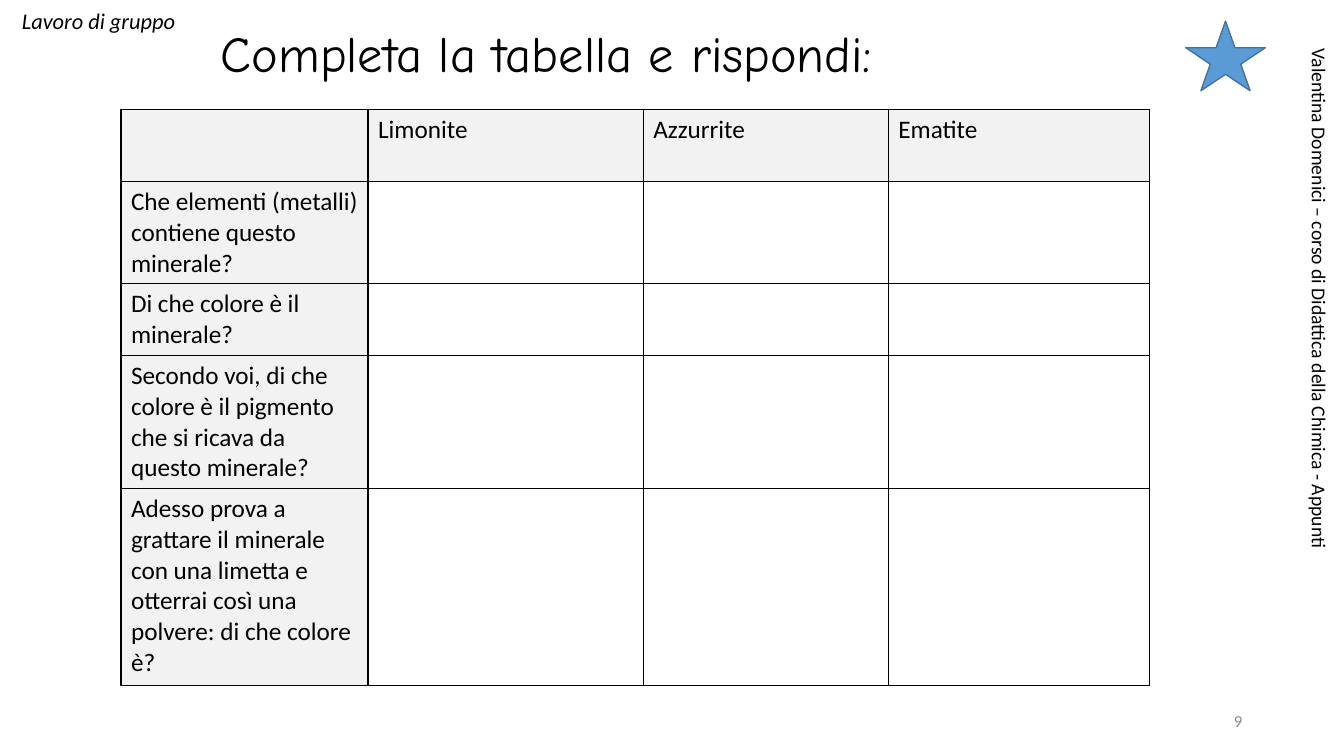
"""Build the group-work slide with the mineral table."""
from lxml import etree
from pptx import Presentation
from pptx import util as u
from pptx.dml.color import RGBColor
from pptx.enum import shapes, text
from pptx.oxml import ns

BLACK = RGBColor(0x00, 0x00, 0x00)
WHITE = RGBColor(0xFF, 0xFF, 0xFF)
HEADER_GREY = RGBColor(0xF2, 0xF2, 0xF2)
NUMBER_GREY = RGBColor(0x8C, 0x8C, 0x8C)
STAR_BLUE = RGBColor(0x5B, 0x9B, 0xD5)
STAR_EDGE = RGBColor(0x43, 0x73, 0x9E)

PX = 9144
SLIDE_SIZE = (1333, 750)
TITLE = "Completa la tabella e rispondi:"
TITLE_BOX = (209, 21, 900, 69)
MINERALS = ["Limonite", "Azzurrite", "Ematite"]
QUESTIONS = [
    "Che elementi (metalli) contiene questo minerale?",
    "Di che colore è il minerale?",
    "Secondo voi, di che colore è il pigmento che si ricava da questo minerale?",
    "Adesso prova a grattare il minerale con una limetta e otterrai così una "
    "polvere: di che colore è?",
]
TABLE_ORIGIN = (120, 109)
COLUMN_WIDTHS = [245, 273, 243, 259]
ROW_HEIGHTS = [71, 101, 71, 132, 195]
STAR_BOX = (1176, 21, 79, 69)
LABELS = [
    {"words": "Lavoro di gruppo", "box": (12, 2, 176, 37), "size": 16, "italic": True},
    {"words": "9", "box": (942, 695, 300, 40), "size": 12, "color": NUMBER_GREY,
     "align": text.PP_ALIGN.RIGHT, "anchor": text.MSO_ANCHOR.MIDDLE},
    {"words": "Valentina Domenici – corso di Didattica della Chimica - Appunti",
     "box": (995, 335, 627, 34), "size": 14, "rotation": 90},
]


def to_emu(lengths):
    """Convert px lengths to EMU."""
    return [u.Emu(length * PX) for length in lengths]


def write(frame, words, size, font="Calibri", color=BLACK, italic=False):
    """Set and format the text of a frame."""
    frame.text = words
    for run in frame.paragraphs[0].runs:
        run.font.name = font
        run.font.size = u.Pt(size)
        run.font.color.rgb = color
        run.font.italic = italic


def add_title(slide):
    """Place and format the title placeholder."""
    title = slide.shapes.title
    title.left, title.top, title.width, title.height = to_emu(TITLE_BOX)
    frame = title.text_frame
    write(frame, TITLE, 36, "Comic Neue")
    frame.auto_size = text.MSO_AUTO_SIZE.NONE
    frame.vertical_anchor = text.MSO_ANCHOR.MIDDLE
    paragraph = frame.paragraphs[0]
    paragraph.alignment = text.PP_ALIGN.LEFT
    paragraph.line_spacing = 0.9


def add_borders(cell):
    """Draw a thin black line on each side of a cell."""
    properties = cell._tc.get_or_add_tcPr()
    for side in ("a:lnL", "a:lnR", "a:lnT", "a:lnB"):
        line = etree.SubElement(properties, ns.qn(side), w=str(u.Pt(1)))
        fill = etree.SubElement(line, ns.qn("a:solidFill"))
        etree.SubElement(fill, ns.qn("a:srgbClr"), val=str(BLACK))


def add_mineral_table(slide):
    """Add the table of questions by mineral."""
    contents = [["", *MINERALS]] + [[question] + [""] * len(MINERALS) for question in QUESTIONS]
    box = (*TABLE_ORIGIN, sum(COLUMN_WIDTHS), sum(ROW_HEIGHTS))
    table = slide.shapes.add_table(len(contents), len(COLUMN_WIDTHS), *to_emu(box)).table
    table.first_row = table.horz_banding = False
    for column, width in zip(table.columns, to_emu(COLUMN_WIDTHS)):
        column.width = width
    for row, height in zip(table.rows, to_emu(ROW_HEIGHTS)):
        row.height = height
    for row_index, words_in_row in enumerate(contents):
        for column_index, words in enumerate(words_in_row):
            cell = table.cell(row_index, column_index)
            write(cell.text_frame, words, 18)
            add_borders(cell)
            cell.fill.solid()
            is_header = row_index == 0 or column_index == 0
            cell.fill.fore_color.rgb = HEADER_GREY if is_header else WHITE


def add_star(slide):
    """Add the blue star."""
    star = slide.shapes.add_shape(shapes.MSO_SHAPE.STAR_5_POINT, *to_emu(STAR_BOX))
    star.shadow.inherit = False
    star.fill.solid()
    star.fill.fore_color.rgb = STAR_BLUE
    star.line.color.rgb = STAR_EDGE
    star.line.width = u.Pt(1)


def add_label(slide, words, box, size, color=BLACK, italic=False, rotation=0,
              align=text.PP_ALIGN.LEFT, anchor=text.MSO_ANCHOR.TOP):
    """Add a one-line text box."""
    label = slide.shapes.add_textbox(*to_emu(box))
    label.rotation = rotation
    frame = label.text_frame
    frame.word_wrap = True
    frame.vertical_anchor = anchor
    write(frame, words, size, color=color, italic=italic)
    frame.paragraphs[0].alignment = align


def main():
    """Assemble and save the slide."""
    presentation = Presentation()
    presentation.slide_width, presentation.slide_height = to_emu(SLIDE_SIZE)
    slide = presentation.slides.add_slide(presentation.slide_layouts[5])
    add_title(slide)
    add_mineral_table(slide)
    add_star(slide)
    for label in LABELS:
        add_label(slide, **label)
    presentation.save("out.pptx")


if __name__ == "__main__":
    main()
